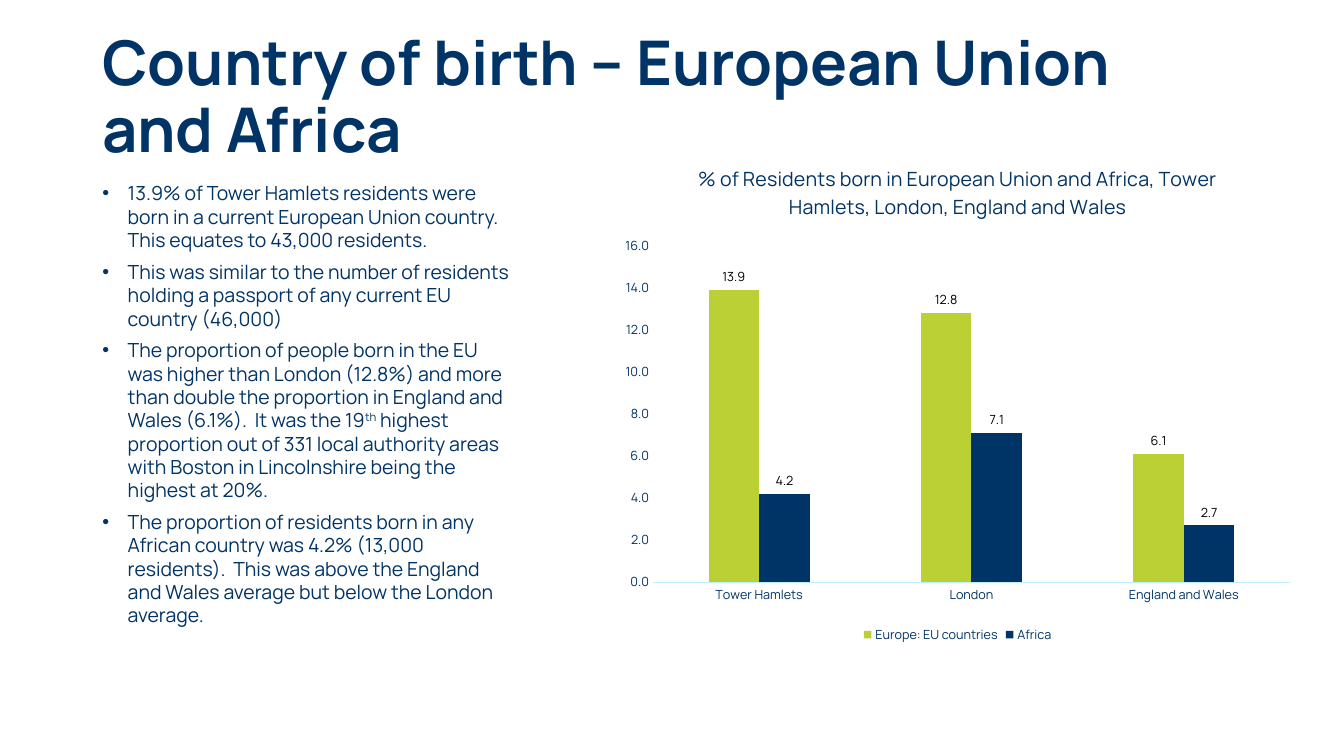
from lxml.etree import SubElement as Sub
from pptx import Presentation
from pptx.chart.data import CategoryChartData as Data
from pptx.dml.color import RGBColor as RGB
from pptx.enum.chart import XL_CHART_TYPE as Kind
from pptx.enum.chart import XL_LABEL_POSITION as Spot
from pptx.enum.chart import XL_LEGEND_POSITION as Place
from pptx.enum.chart import XL_TICK_MARK as Tick
from pptx.enum.text import MSO_ANCHOR as Anchor
from pptx.oxml import parse_xml
from pptx.oxml.ns import nsdecls, qn
from pptx.util import Cm, Pt

FONT = "Manrope"
COLORS = {"navy": "003366", "lime": "BBD034", "ice": "C1EEFF", "black": "000000"}
TITLE = "Country of birth – European Union and Africa"
POINTS = [
    ["13.9% of Tower Hamlets residents were born in a current European Union "
     "country.  This equates to 43,000 residents."],
    ["This was similar to the number of residents holding a passport of any "
     "current EU country (46,000)"],
    ["The proportion of people born in the EU was higher than London (12.8%) and "
     "more than double the proportion in England and Wales (6.1%).  It was the 19",
     "th",
     " highest proportion out of 331 local authority areas with Boston in "
     "Lincolnshire being the highest at 20%."],
    ["The proportion of residents born in any African country was 4.2% (13,000 "
     "residents).  This was above the England and Wales average but below the "
     "London average."],
]
HEAD = ("% of Residents born in European Union and Africa, "
        "Tower Hamlets, London, England and Wales")
AREAS = ["Tower Hamlets", "London", "England and Wales"]
SERIES = [
    ("Europe: EU countries", [13.9, 12.8, 6.1], "lime"),
    ("Africa", [4.2, 7.1, 2.7], "navy"),
]
FORMAT = "#,##0.0"


def color(name):
    return RGB.from_string(COLORS[name])


def style(font, size, name="navy", bold=False):
    font.name = FONT
    font.size = Pt(size)
    font.bold = bold
    font.color.rgb = color(name)


def add_box(slide, left, top, width, height):
    box = slide.shapes.add_textbox(Cm(left), Cm(top), Cm(width), Cm(height))
    box.text_frame.word_wrap = True
    return box.text_frame


def add_run(para, text, size, bold=False):
    run = para.add_run()
    run.text = text
    style(run.font, size, bold=bold)
    return run


def add_title(slide):
    frame = add_box(slide, 2.33, 0.66, 27.15, 3.68)
    frame.vertical_anchor = Anchor.MIDDLE
    para = frame.paragraphs[0]
    para.line_spacing = 0.9
    add_run(para, TITLE, 44, True)


def add_points(slide):
    frame = add_box(slide, 2.33, 4.45, 10.87, 12.09)
    for i, parts in enumerate(POINTS):
        para = frame.add_paragraph() if i else frame.paragraphs[0]
        para.line_spacing = 1.0
        para.space_before = Pt(6 if i else 0)
        props = para._p.get_or_add_pPr()
        props.set("marL", str(Cm(0.64)))
        props.set("indent", str(-Cm(0.64)))
        Sub(props, qn("a:buFont")).set("typeface", "Arial")
        Sub(props, qn("a:buChar")).set("char", "•")
        for part in parts:
            run = add_run(para, part, 13.9)
            if part == "th":
                run.font._element.set("baseline", "30000")


def make_layout(inner=False, **sides):
    rows = '<c:layoutTarget val="inner"/>' if inner else ""
    rows += "".join(f'<c:{side}Mode val="edge"/>' for side in "xy")
    rows += "".join(f'<c:{side} val="{size}"/>' for side, size in sides.items())
    return parse_xml(f'<c:layout {nsdecls("c")}><c:manualLayout>{rows}'
                     "</c:manualLayout></c:layout>")


def set_layout(node, layout, after=None):
    for old in node.findall(qn("c:layout")):
        node.remove(old)
    if after is None:
        node.insert(0, layout)
    else:
        node.find(qn(after)).addnext(layout)


def style_axis(axis):
    axis.has_major_gridlines = False
    axis.major_tick_mark = axis.minor_tick_mark = Tick.NONE
    style(axis.tick_labels.font, 9)


def style_bars(plot):
    plot.gap_width = 219
    plot.overlap = 0
    plot.vary_by_categories = False
    for bars, (_, _, tint) in zip(plot.series, SERIES):
        bars.format.fill.solid()
        bars.format.fill.fore_color.rgb = color(tint)
        labels = bars.data_labels
        labels.show_value = True
        labels.number_format = FORMAT
        labels.number_format_is_linked = False
        labels.position = Spot.OUTSIDE_END
        style(labels.font, 9, "black")


def add_bars(slide):
    data = Data(number_format=FORMAT)
    data.categories = AREAS
    for name, values, _ in SERIES:
        data.add_series(name, values)
    chart = slide.shapes.add_chart(
        Kind.COLUMN_CLUSTERED, Cm(15.41), Cm(3.65), Cm(17.45), Cm(12.67), data
    ).chart
    style(chart.font, 10)
    title = chart.chart_title
    add_run(title.text_frame.paragraphs[0], HEAD, 14)
    title.include_in_layout = False
    set_layout(title._element, make_layout(x=0.12, y=0.03), "c:tx")

    style_axis(chart.category_axis)
    line = chart.category_axis.format.line
    line.color.rgb = color("ice")
    line.width = Pt(0.75)
    scale = chart.value_axis
    style_axis(scale)
    scale.format.line.fill.background()
    scale.minimum_scale, scale.maximum_scale, scale.major_unit = 0, 16, 2
    scale.tick_labels.number_format = FORMAT
    scale.tick_labels.number_format_is_linked = False

    style_bars(chart.plots[0])
    area = chart._chartSpace.chart.plotArea
    set_layout(area, make_layout(True, x=0.06, y=0.2, w=0.92, h=0.67))
    chart.has_legend = True
    chart.legend.position = Place.BOTTOM
    chart.legend.include_in_layout = False
    style(chart.legend.font, 9)


def main():
    deck = Presentation()
    deck.slide_width, deck.slide_height = Cm(33.87), Cm(19.05)
    slide = deck.slides.add_slide(deck.slide_layouts[6])
    add_title(slide)
    add_points(slide)
    add_bars(slide)
    deck.save("out.pptx")


if __name__ == "__main__":
    main()
